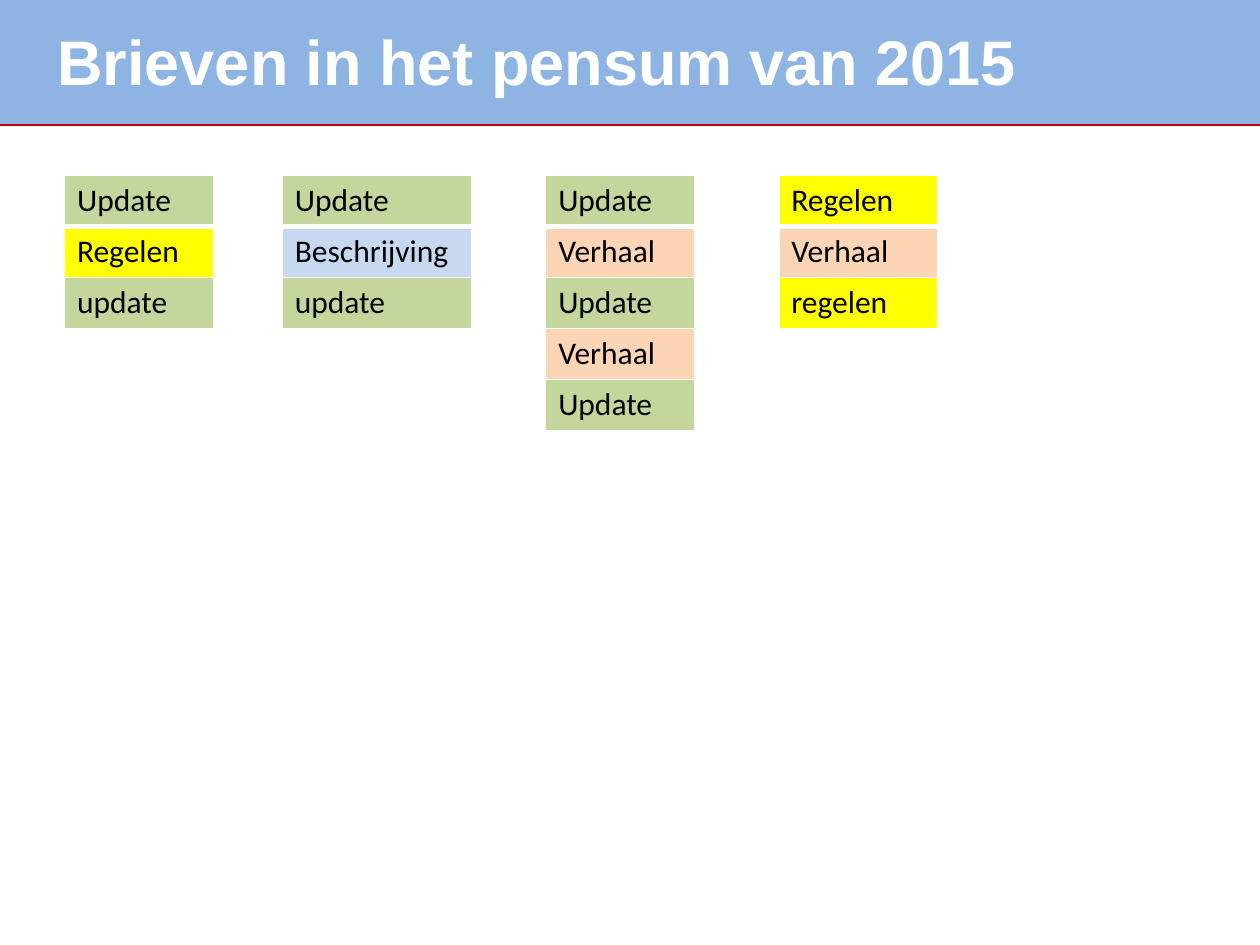
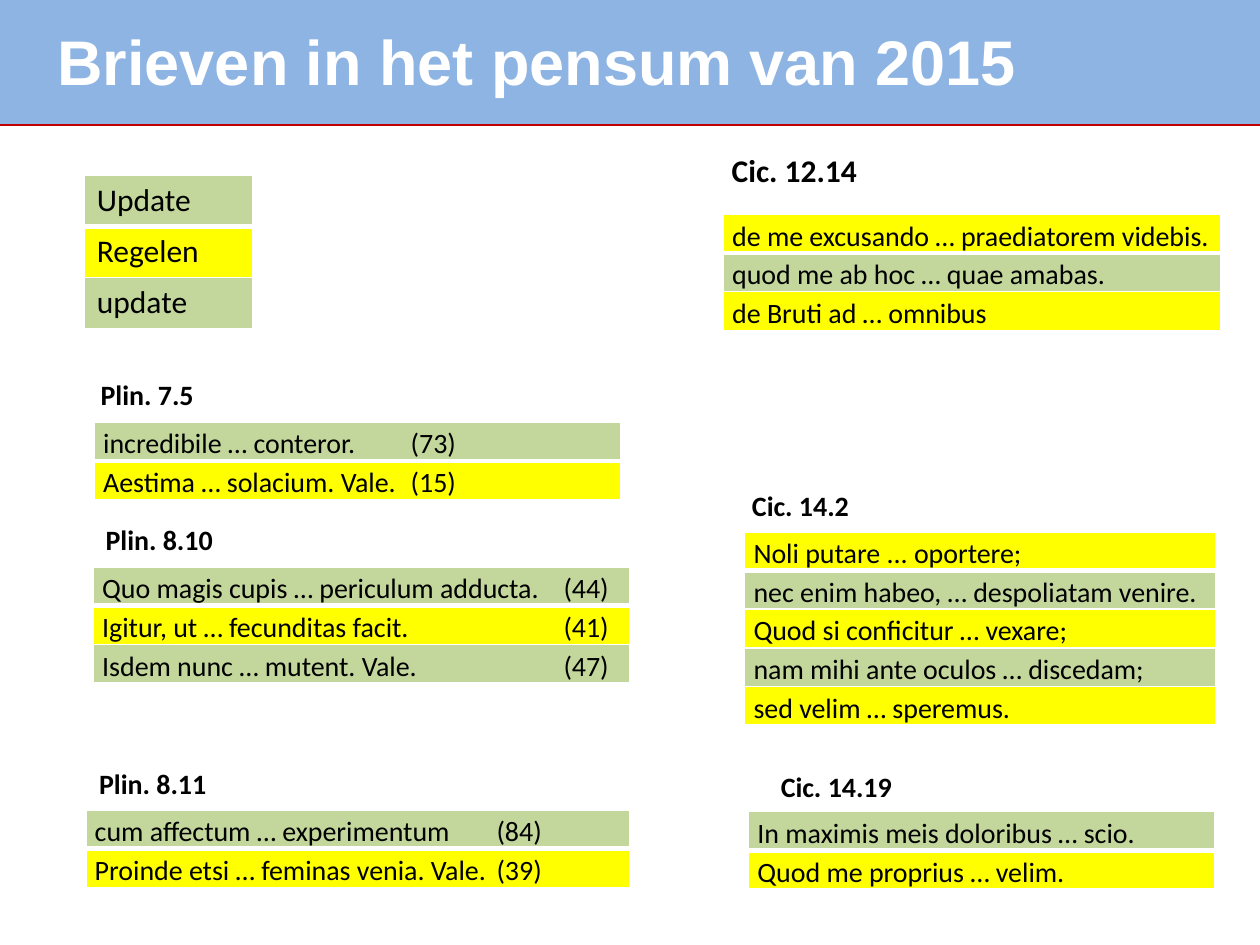
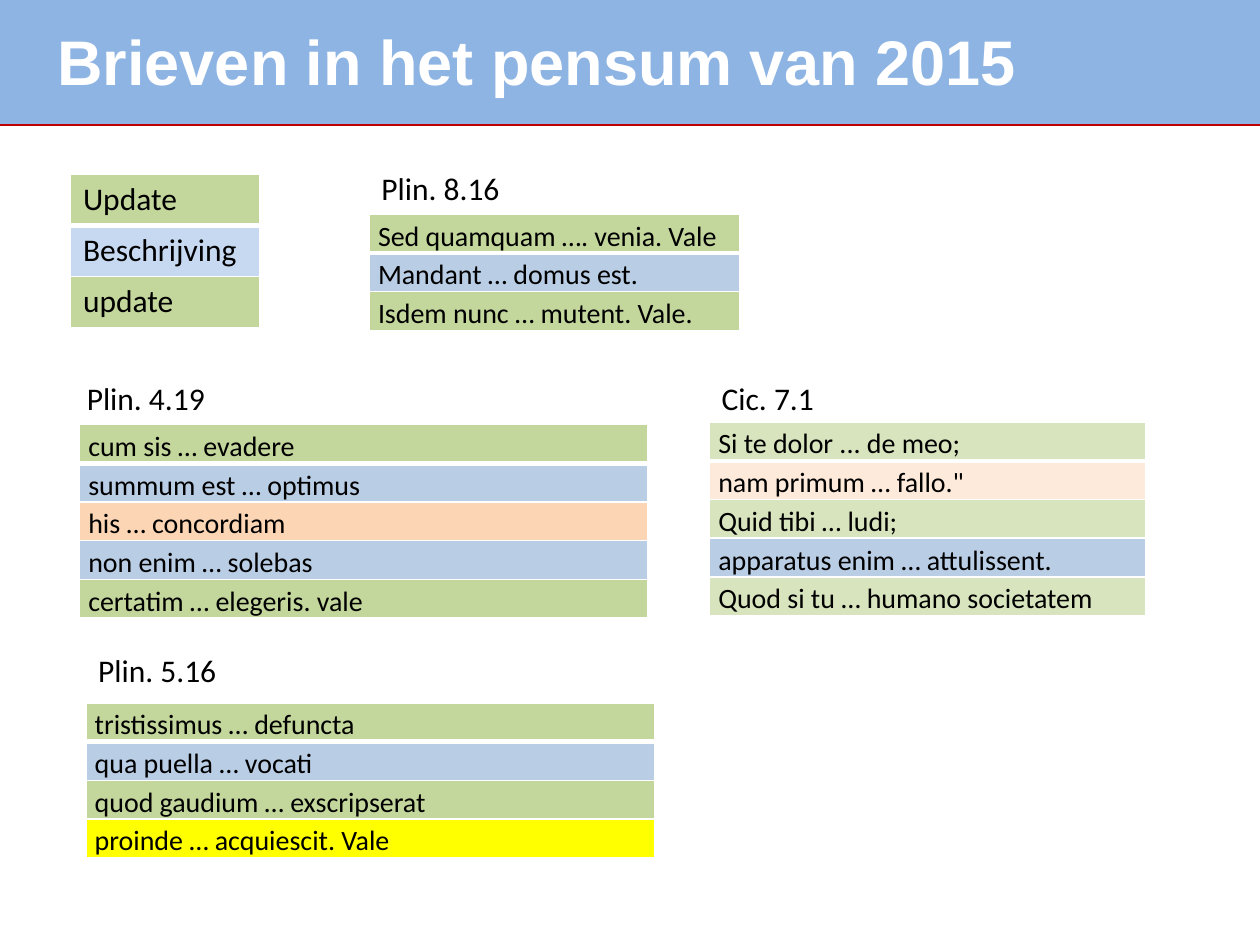
from lxml import etree
from pptx import Presentation
from pptx.dml.color import RGBColor
from pptx.enum.shapes import MSO_CONNECTOR, MSO_SHAPE
from pptx.oxml.ns import qn
from pptx.util import Cm, Pt

STRAIGHT = MSO_CONNECTOR.STRAIGHT
RECT = MSO_SHAPE.RECTANGLE

TITLE = "Brieven in het pensum van 2015"
BAND_H = 2.5
LABEL_H, QUOTE_H = 1.03, 0.78  # row heights
GREEN, YELLOW, PEACH, SKY = "C3D69B", "FFFF00", "FCD5B5", "C6D9F1"
BLUE, PALE_GREEN, PALE_PEACH = "B9CDE5", "D7E4BD", "FDEADA"
TITLE_FONT = {"name": "Arial", "size": Pt(36), "bold": True}
LABEL_FONT = {"name": "Calibri", "size": Pt(18), "bold": False}
QUOTE_FONT = {"name": "Calibri", "size": Pt(16), "bold": False}
BOLD_16 = {"name": "Calibri", "size": Pt(16), "bold": True}
BOLD_18 = {"name": "Calibri", "size": Pt(18), "bold": True}


def rgb(value):
    return RGBColor.from_string(value)


def write(tf, text, font, color="000000"):
    p = tf.paragraphs[0]
    r = p.add_run()
    r.text = text
    for key, value in font.items():
        setattr(r.font, key, value)
    r.font.color.rgb = rgb(color)
    return p


# Letter structures: left, top, width, rows
update_regelen = [(GREEN, "Update"), (YELLOW, "Regelen"), (GREEN, "update")]
update_beschrijving = [(GREEN, "Update"), (SKY, "Beschrijving"), (GREEN, "update")]
update_verhaal = [(GREEN, "Update"), (PEACH, "Verhaal")] * 2 + [(GREEN, "Update")]
regelen_verhaal = [(YELLOW, "Regelen"), (PEACH, "Verhaal"), (YELLOW, "regelen")]

# Headings: left, top, width, font, text
# Quotes: left, top, width, tab stop of the word count, rows
slides = [
    {
        "labels": [
            (1.3, 3.53, 3, update_regelen),
            (5.69, 3.53, 3.81, update_beschrijving),
            (11, 3.53, 3, update_verhaal),
            (15.7, 3.53, 3.2, regelen_verhaal),
        ],
        "headings": [],
        "quotes": [],
    },
    {
        "labels": [(1.7, 3.53, 3.4, update_regelen)],
        "headings": [
            (1.78, 7.49, 3.4, BOLD_16, "Plin. 7.5"),
            (1.88, 10.41, 6, BOLD_16, "Plin. 8.10"),
            (1.75, 15.32, 6, BOLD_16, "Plin. 8.11"),
            (14.5, 2.92, 3.4, BOLD_18, "Cic. 12.14"),
            (14.91, 9.73, 3.4, BOLD_16, "Cic. 14.2"),
            (15.49, 15.39, 3.4, BOLD_16, "Cic. 14.19"),
        ],
        "quotes": [
            (1.9, 8.51, 10.62, 6.2, [
                (GREEN, "incredibile … conteror.\t(73)"),
                (YELLOW, "Aestima … solacium. Vale.\t(15)")]),
            (1.88, 11.43, 10.82, 9.3, [
                (GREEN, "Quo magis cupis … periculum adducta.\t(44)"),
                (YELLOW, "Igitur, ut … fecunditas facit.\t(41)"),
                (GREEN, "Isdem nunc … mutent. Vale.\t(47)")]),
            (1.73, 16.33, 10.97, 8.1, [
                (GREEN, "cum affectum … experimentum\t(84)"),
                (YELLOW, "Proinde etsi … feminas venia. Vale.\t(39)")]),
            (14.58, 4.32, 10.03, None, [
                (YELLOW, "de me excusando … praediatorem videbis."),
                (GREEN, "quod me ab hoc … quae amabas."),
                (YELLOW, "de Bruti ad … omnibus")]),
            (15.01, 10.72, 9.5, None, [
                (YELLOW, "Noli putare ... oportere;"),
                (GREEN, "nec enim habeo, … despoliatam venire."),
                (YELLOW, "Quod si conficitur … vexare;"),
                (GREEN, "nam mihi ante oculos … discedam;"),
                (YELLOW, "sed velim … speremus.")]),
            (15.09, 16.36, 9.4, None, [
                (GREEN, "In maximis meis doloribus … scio."),
                (YELLOW, "Quod me proprius … velim.")]),
        ],
    },
    {
        "labels": [(1.42, 3.51, 3.81, update_beschrijving)],
        "headings": [
            (7.44, 3.28, 5.2, LABEL_FONT, "Plin. 8.16"),
            (1.5, 7.52, 3.6, LABEL_FONT, "Plin. 4.19"),
            (1.73, 13, 3.6, LABEL_FONT, "Plin. 5.16"),
            (14.3, 7.52, 3.6, LABEL_FONT, "Cic. 7.1"),
        ],
        "quotes": [
            (7.44, 4.32, 7.47, None, [
                (GREEN, "Sed quamquam …. venia. Vale"),
                (BLUE, "Mandant … domus est."),
                (GREEN, "Isdem nunc … mutent. Vale.")]),
            (1.6, 8.56, 11.46, None, [
                (GREEN, "cum sis … evadere"),
                (BLUE, "summum est … optimus"),
                (PEACH, "his … concordiam"),
                (BLUE, "non enim … solebas"),
                (GREEN, "certatim … elegeris. vale")]),
            (1.73, 14.17, 11.46, None, [
                (GREEN, "tristissimus … defuncta"),
                (BLUE, "qua puella … vocati"),
                (GREEN, "quod gaudium … exscripserat"),
                (YELLOW, "proinde … acquiescit. Vale")]),
            (14.3, 8.51, 8.79, None, [
                (PALE_GREEN, "Si te dolor ... de meo;"),
                (PALE_PEACH, "nam primum … fallo.\""),
                (PALE_GREEN, "Quid tibi … ludi;"),
                (BLUE, "apparatus enim … attulissent."),
                (PALE_GREEN, "Quod si tu … humano societatem")]),
        ],
    },
]

prs = Presentation()
prs.slide_width, prs.slide_height = Cm(25.4), Cm(19.05)

for content in slides:
    s = prs.slides.add_slide(prs.slide_layouts[6])

    # Title band with red rule
    line = s.shapes.add_connector(STRAIGHT, 0, Cm(BAND_H), prs.slide_width, Cm(BAND_H))
    line.line.color.rgb = rgb("C00000")
    line.line.width = Pt(2)
    etree.SubElement(line._element.spPr, qn("a:effectLst"))
    band = s.shapes.add_shape(RECT, 0, 0, prs.slide_width, Cm(BAND_H))
    band.shadow.inherit = False
    band.fill.solid()
    band.fill.fore_color.rgb = rgb("8EB4E3")
    band.line.fill.background()

    # Title and headings
    texts = [(0.91, 0.33, 23.2, TITLE_FONT, TITLE)] + content["headings"]
    for left, top, width, font, text in texts:
        is_title = font is TITLE_FONT
        sp = s.shapes.add_textbox(Cm(left), Cm(top), Cm(width), Cm(1.8 if is_title else 1))
        sp.text_frame.word_wrap = True
        write(sp.text_frame, text, font, "FFFFFF" if is_title else "000000")

    # Tables: structure labels and quotes
    labels = [(x, y, w, None, rows, False) for x, y, w, rows in content["labels"]]
    quotes = [(*quote, True) for quote in content["quotes"]]
    for left, top, width, tab, rows, is_quote in labels + quotes:
        row_h = QUOTE_H if is_quote else LABEL_H
        table = s.shapes.add_table(len(rows), 1, Cm(left), Cm(top), Cm(width),
                                   Cm(row_h * len(rows))).table
        table.first_row = table.horz_banding = False
        for i, (color, text) in enumerate(rows):
            table.rows[i].height = Cm(row_h)
            cell = table.cell(i, 0)
            cell.fill.solid()
            cell.fill.fore_color.rgb = rgb(color)
            p = write(cell.text_frame, text, QUOTE_FONT if is_quote else LABEL_FONT)
            if is_quote:
                cell.margin_left = cell.margin_right = Cm(0.18)
                cell.margin_top = cell.margin_bottom = 0
                p.line_spacing = 1.15
            if tab:
                tabs = etree.SubElement(p._p.get_or_add_pPr(), qn("a:tabLst"))
                etree.SubElement(tabs, qn("a:tab"), pos=str(Cm(tab)), algn="l")

            # White borders, thicker below the first row
            tcPr = cell._tc.get_or_add_tcPr()
            for n, side in enumerate("LRTB"):
                thick = (i, side) in ((0, "B"), (1, "T"))
                ln = etree.Element(qn(f"a:ln{side}"), w=str(Pt(3 if thick else 1)))
                fill = etree.SubElement(ln, qn("a:solidFill"))
                etree.SubElement(fill, qn("a:srgbClr"), val="FFFFFF")
                tcPr.insert(n, ln)

prs.save("out.pptx")
